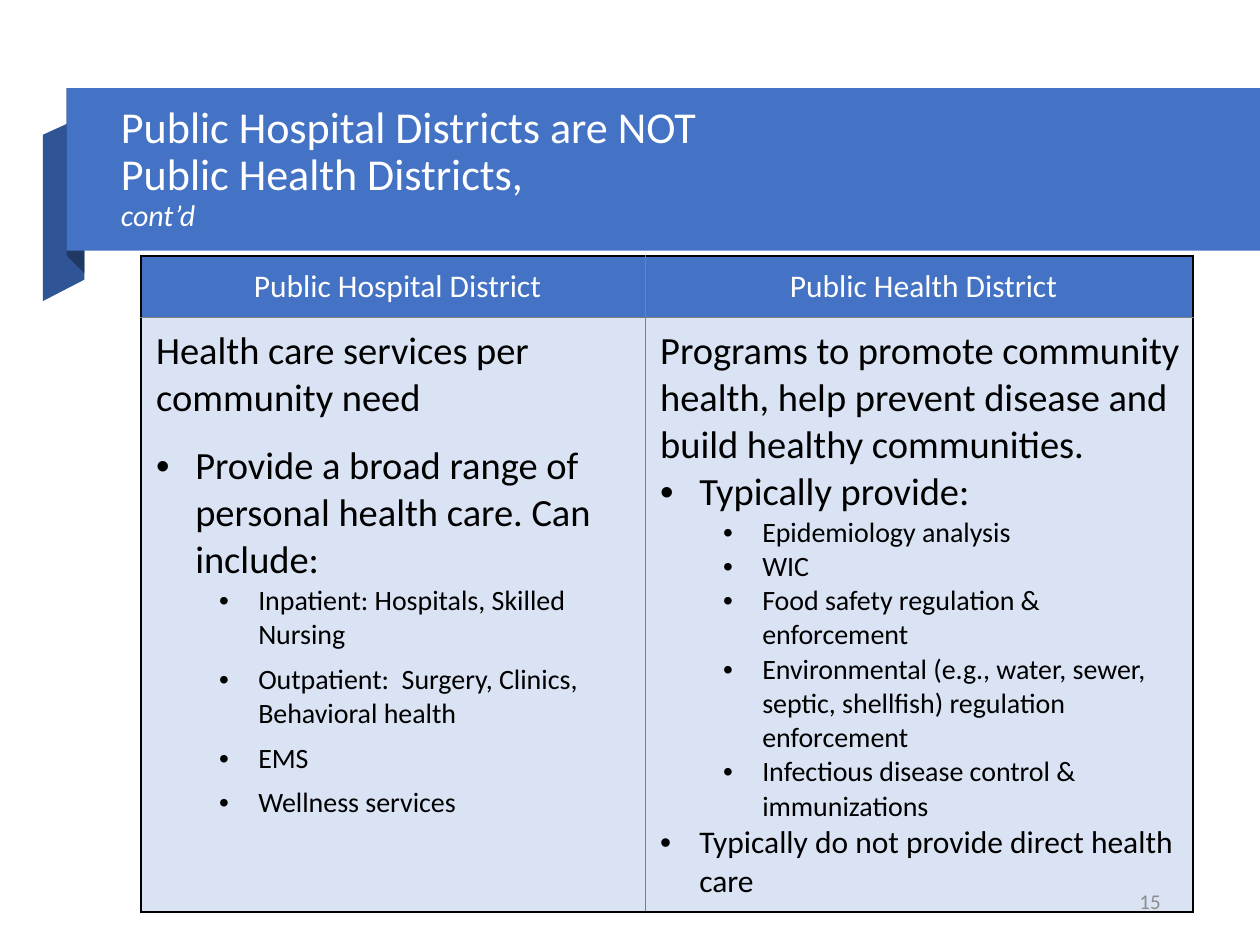
"""Build a slide that compares hospital districts with health districts."""
from dataclasses import dataclass

from lxml import etree
from pptx import Presentation
from pptx.dml.color import RGBColor
from pptx.enum.shapes import MSO_SHAPE
from pptx.enum.text import MSO_ANCHOR, MSO_AUTO_SIZE, PP_ALIGN
from pptx.oxml.ns import qn
from pptx.util import Inches, Pt

RECT = MSO_SHAPE.RECTANGLE
MIDDLE, TOP = MSO_ANCHOR.MIDDLE, MSO_ANCHOR.TOP
LEFT, CENTER, RIGHT = PP_ALIGN.LEFT, PP_ALIGN.CENTER, PP_ALIGN.RIGHT
NO_FIT = MSO_AUTO_SIZE.NONE
WIDE, HIGH = Inches(10), Inches(7.5)


@dataclass(frozen=True)
class Theme:
    """Colours and type sizes of the slide."""
    font: str = "Calibri"
    blue: str = "4472C4"
    side: str = "2F5597"
    fold: str = "203864"
    pale: str = "DAE3F3"
    white: str = "FFFFFF"
    black: str = "000000"
    rule: str = "808080"
    grey: str = "8C8C8C"
    title: float = 25.2
    note: float = 17.1
    head: float = 18
    lead: float = 22
    item: float = 16
    page: float = 12


THEME = Theme()
HEADS = ["Public Hospital District", "Public Health District"]
# Each line holds depth (0 plain, 1 bullet, 2 sub-bullet), size, space after and text.
CARE = [
    (0, THEME.lead, 12, "Health care services per community need"),
    (1, THEME.lead, 0, "Provide a broad range of personal health care. Can include:"),
    *[(2, THEME.item, 6, text) for text in (
        "Inpatient: Hospitals, Skilled Nursing",
        "Outpatient:  Surgery, Clinics, Behavioral health",
        "EMS",
        "Wellness services")],
]
HEALTH = [
    (0, THEME.lead, 0, "Programs to promote community health, help prevent disease "
                       "and build healthy communities."),
    (1, THEME.lead, 0, "Typically provide:"),
    *[(2, THEME.item, 0, text) for text in (
        "Epidemiology analysis",
        "WIC",
        "Food safety regulation & enforcement",
        "Environmental (e.g., water, sewer, septic, shellfish) regulation enforcement",
        "Infectious disease control & immunizations")],
    (1, THEME.head, 0, "Typically do not provide direct health care"),
]


def share(left, top, width, height):
    """Turn percentages of the slide into a box."""
    return [round(part * full / 100) for part, full in
            zip((left, top, width, height), (WIDE, HIGH, WIDE, HIGH))]


def style(para, size, color, align=LEFT):
    """Set the type of a whole paragraph."""
    para.alignment = align
    font = para.font
    font.name, font.size, font.bold = THEME.font, Pt(size), False
    font.color.rgb = RGBColor.from_string(color)


def paint(shape, color):
    """Give a shape a flat fill without line or shadow."""
    shape.shadow.inherit = False
    shape.fill.solid()
    shape.fill.fore_color.rgb = RGBColor.from_string(color)
    shape.line.fill.background()


def add_flap(slide, points, color):
    """Draw one face of the ribbon from points in percent of the slide."""
    spots = [share(x, y, 0, 0)[:2] for x, y in points]
    pen = slide.shapes.build_freeform(*spots[0])
    pen.add_line_segments(spots[1:])
    paint(pen.convert_to_shape(), color)


def add_ribbon(slide):
    """Draw the folded band behind the title."""
    add_flap(slide, [(6.7, 29.6), (3.4, 31.87), (3.4, 14.27), (6.7, 12.27)], THEME.side)
    add_flap(slide, [(6.7, 28.93), (5.3, 27.07), (5.3, 9.33), (6.7, 11.33)], THEME.fold)
    paint(slide.shapes.add_shape(RECT, *share(5.3, 9.33, 94.7, 17.2)), THEME.blue)


def add_title(slide):
    """Place the title over the ribbon."""
    title = slide.shapes.title
    title.left, title.top, title.width, title.height = share(8.6, 11.47, 84.5, 12.8)
    slide.shapes._spTree.append(title._element)
    frame = title.text_frame
    frame.auto_size, frame.vertical_anchor = NO_FIT, MIDDLE
    para = frame.paragraphs[0]
    para.text = "Public Hospital Districts are NOT \vPublic Health Districts,\vcont’d"
    para.line_spacing = 0.9
    style(para, THEME.title, THEME.white)
    note = para.runs[-1].font
    note.size, note.italic = Pt(THEME.note), True


def add_edge(cell, side, outer):
    """Rule one side of a cell, heavy on the outside of the table."""
    color, width = (THEME.black, 1.5) if outer else (THEME.rule, 0.5)
    line = etree.SubElement(cell._tc.get_or_add_tcPr(), qn(f"a:ln{side}"), w=str(Pt(width)))
    fill = etree.SubElement(line, qn("a:solidFill"))
    etree.SubElement(fill, qn("a:srgbClr"), val=color)


def add_bullet(para, depth):
    """Indent a paragraph and give it a bullet."""
    para.level = depth - 1
    props = para._p.get_or_add_pPr()
    props.set("marL", str(Inches(0.31 + 0.5 * (depth - 1))))
    props.set("indent", str(Inches(-0.31)))
    etree.SubElement(props, qn("a:buFont"), typeface="Arial")
    etree.SubElement(props, qn("a:buChar"), char="•")


def fill_cell(cell, lines, color, ink, align, anchor):
    """Fill a cell with paragraphs."""
    cell.fill.solid()
    cell.fill.fore_color.rgb = RGBColor.from_string(color)
    cell.vertical_anchor = anchor
    cell.margin_left, cell.margin_right = Inches(0.12), Inches(0.05)
    cell.margin_top = cell.margin_bottom = Inches(0.09)
    frame = cell.text_frame
    for index, (depth, size, after, text) in enumerate(lines):
        para = frame.add_paragraph() if index else frame.paragraphs[0]
        para.text = text
        if depth:
            add_bullet(para, depth)
        para.space_after = Pt(after)
        style(para, size, ink, align)


def add_grid(slide):
    """Add the table of the two kinds of district."""
    table = slide.shapes.add_table(2, 2, *share(11.2, 27.07, 83.5, 67.47)).table
    table.first_row = table.horz_banding = False
    for col, width in zip(table.columns, (4, 4.35)):
        col.width = Inches(width)
    for row, height in zip(table.rows, (0.48, 4.58)):
        row.height = Inches(height)
    for col, (head, body) in enumerate(zip(HEADS, (CARE, HEALTH))):
        for row in range(2):
            for side, outer in zip("LRTB", (col == 0, col == 1, row == 0, row == 1)):
                add_edge(table.cell(row, col), side, outer)
        fill_cell(table.cell(0, col), [(0, THEME.head, 0, head)],
                  THEME.blue, THEME.white, CENTER, MIDDLE)
        fill_cell(table.cell(1, col), body, THEME.pale, THEME.black, LEFT, TOP)


def add_page(slide):
    """Add the page number."""
    frame = slide.shapes.add_textbox(*share(70.6, 92.67, 22.5, 5.33)).text_frame
    frame.word_wrap, frame.vertical_anchor = True, MIDDLE
    para = frame.paragraphs[0]
    para.text = "15"
    style(para, THEME.page, THEME.grey, RIGHT)


def main():
    """Build and save the slide."""
    deck = Presentation()
    deck.slide_width, deck.slide_height = WIDE, HIGH
    slide = deck.slides.add_slide(deck.slide_layouts[5])
    add_ribbon(slide)
    add_title(slide)
    add_grid(slide)
    add_page(slide)
    deck.save("out.pptx")


if __name__ == "__main__":
    main()
